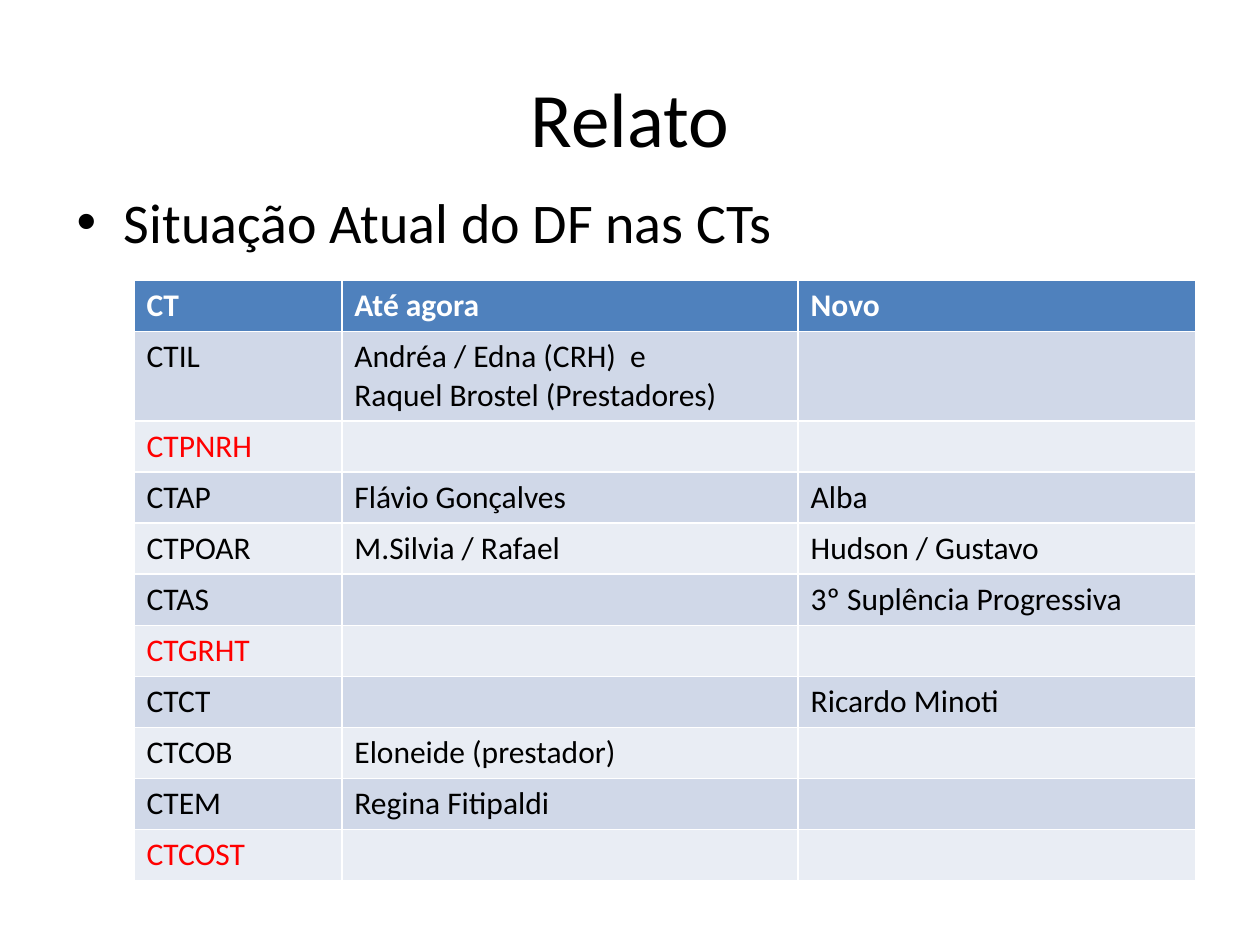
"""Build the slide showing the current situation of DF in the technical chambers."""
from pptx import Presentation
from pptx import util as u
from pptx.dml.color import RGBColor
from pptx.enum import text

TITLE = "Relato"
TOPIC = "Situação Atual do DF nas CTs"
HEADER = ("CT", "Até agora", "Novo")
CHAMBERS = [
    ("CTIL", "Andréa / Edna (CRH)  e\nRaquel Brostel (Prestadores)", ""),
    ("CTPNRH", "", ""),
    ("CTAP", "Flávio Gonçalves", "Alba"),
    ("CTPOAR", "M.Silvia / Rafael", "Hudson / Gustavo"),
    ("CTAS", "", "3º Suplência Progressiva"),
    ("CTGRHT", "", ""),
    ("CTCT", "", "Ricardo Minoti"),
    ("CTCOB", "Eloneide (prestador)", ""),
    ("CTEM", "Regina Fitipaldi", ""),
    ("CTCOST", "", ""),
]
COLORS = {
    "text": "000000",
    "header_text": "FFFFFF",
    "vacant": "FF0000",
    "header": "4F81BD",
    "odd": "D0D8E8",
    "even": "E9EDF4",
}
COLUMN_WIDTHS = (4.19, 9.2, 8.01)
ROW_HEIGHT = 1.03
TABLE_LEFT, TABLE_TOP = 2.7, 5.65
TITLE_BOX = (1.27, 0.76, 22.86, 3.18)
BODY_BOX = (1.29, 3.66, 22.86, 13.86)


def format_text(frame, color, **values):
    for paragraph in frame.paragraphs:
        font = paragraph.font
        for name, value in {"name": "Calibri", **values}.items():
            setattr(font, name, value)
        font.color.rgb = RGBColor.from_string(COLORS[color])
        for run in paragraph.runs:
            run.font.color.rgb = RGBColor.from_string(COLORS[color])
            for name, value in {"name": "Calibri", **values}.items():
                setattr(run.font, name, value)


def fill_placeholder(shape, content, box, size, anchor):
    for name, value in zip(("left", "top", "width", "height"), box):
        setattr(shape, name, u.Cm(value))
    shape.text_frame.text = content
    shape.text_frame.vertical_anchor = anchor
    format_text(shape.text_frame, "text", size=u.Pt(size))


def add_chamber_table(slide):
    rows = [HEADER, *CHAMBERS]
    frame = slide.shapes.add_table(
        len(rows), len(HEADER), u.Cm(TABLE_LEFT), u.Cm(TABLE_TOP),
        u.Cm(sum(COLUMN_WIDTHS)), u.Cm(ROW_HEIGHT * len(rows)))
    table = frame.table
    for column, width in zip(table.columns, COLUMN_WIDTHS):
        column.width = u.Cm(width)
    for row_index, row in enumerate(rows):
        is_header = row_index == 0
        band = "header" if is_header else ("even", "odd")[row_index % 2]
        color = "header_text" if is_header else "text" if any(row[1:]) else "vacant"
        table.rows[row_index].height = u.Cm(ROW_HEIGHT)
        for column_index, content in enumerate(row):
            cell = table.cell(row_index, column_index)
            cell.text = content
            cell.fill.solid()
            cell.fill.fore_color.rgb = RGBColor.from_string(COLORS[band])
            format_text(cell.text_frame, color, size=u.Pt(18), bold=is_header)


def main():
    presentation = Presentation()
    presentation.slide_width, presentation.slide_height = u.Cm(25.4), u.Cm(19.05)
    slide = presentation.slides.add_slide(presentation.slide_layouts[1])
    fill_placeholder(slide.shapes.title, TITLE, TITLE_BOX, 44, text.MSO_ANCHOR.MIDDLE)
    fill_placeholder(slide.placeholders[1], TOPIC, BODY_BOX, 32, text.MSO_ANCHOR.TOP)
    add_chamber_table(slide)
    presentation.save("out.pptx")


if __name__ == "__main__":
    main()
